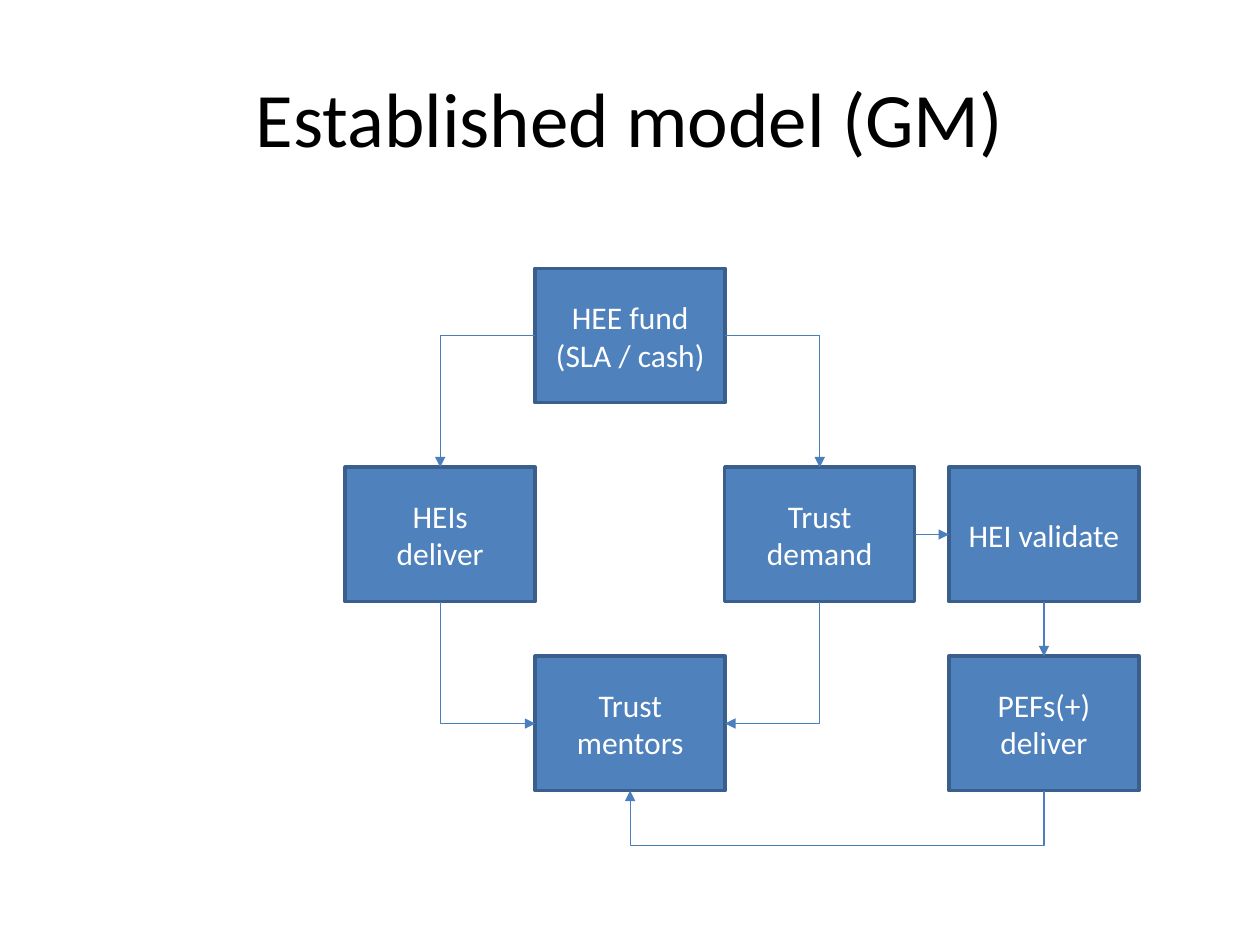
from dataclasses import dataclass
from typing import Optional

from lxml.etree import SubElement
from pptx import Presentation
from pptx.dml.color import RGBColor
from pptx.enum.shapes import MSO_CONNECTOR, MSO_SHAPE
from pptx.enum.text import MSO_ANCHOR, PP_ALIGN
from pptx.oxml.ns import qn
from pptx.util import Cm, Pt

HUES = {"fill": "4F81BD", "edge": "3A5F8C", "link": "4B7EBC",
        "light": "FFFFFF", "dark": "000000"}
WIDE, HIGH = 3.83, 2.71
COLS = [6.96, 10.79, 14.61, 19.13]
ROWS = [5.41, 9.42, 13.23]
LOW = 17.04


@dataclass
class Box:
    text: str
    col: int
    row: int

    @property
    def left(self) -> float:
        return COLS[self.col]

    @property
    def top(self) -> float:
        return ROWS[self.row]

    @property
    def west(self) -> tuple:
        return self.left, self.top + HIGH / 2

    @property
    def east(self) -> tuple:
        return self.left + WIDE, self.top + HIGH / 2

    @property
    def north(self) -> tuple:
        return self.left + WIDE / 2, self.top

    @property
    def south(self) -> tuple:
        return self.left + WIDE / 2, self.top + HIGH


@dataclass
class Link:
    start: tuple
    end: tuple
    bend: Optional[int] = None
    head: bool = True


ACROSS, DOWN = 100000, 0


def hue(name: str) -> RGBColor:
    return RGBColor.from_string(HUES[name])


def style(frame, size: int, tint: str) -> None:
    frame.word_wrap = True
    frame.vertical_anchor = MSO_ANCHOR.MIDDLE
    look = {"name": "Calibri", "size": Pt(size)}
    for para in frame.paragraphs:
        para.alignment = PP_ALIGN.CENTER
        for run in para.runs:
            for key, value in look.items():
                setattr(run.font, key, value)
            run.font.color.rgb = hue(tint)


def draw_box(slide, box: Box) -> None:
    shape = slide.shapes.add_shape(MSO_SHAPE.RECTANGLE, Cm(box.left), Cm(box.top),
                                   Cm(WIDE), Cm(HIGH))
    shape.shadow.inherit = False
    shape.fill.solid()
    shape.fill.fore_color.rgb = hue("fill")
    shape.line.color.rgb = hue("edge")
    shape.line.width = Pt(2)
    shape.text_frame.text = box.text
    style(shape.text_frame, 18, "light")


def draw_link(slide, link: Link) -> None:
    kind = MSO_CONNECTOR.STRAIGHT if link.bend is None else MSO_CONNECTOR.ELBOW
    ends = [Cm(value) for value in link.start + link.end]
    wire = slide.shapes.add_connector(kind, *ends)
    wire.line.color.rgb = hue("link")
    wire.line.width = Pt(0.75)
    props = wire.element.spPr
    if link.head:
        SubElement(props.find(qn("a:ln")), qn("a:tailEnd"), type="triangle")
    SubElement(props, qn("a:effectLst"))
    if link.bend is not None:
        guides = props.find(qn("a:prstGeom")).get_or_add_avLst()
        SubElement(guides, qn("a:gd"), name="adj1", fmla=f"val {link.bend}")


def main() -> None:
    deck = Presentation()
    deck.slide_width, deck.slide_height = Cm(25.4), Cm(19.05)
    slide = deck.slides.add_slide(deck.slide_layouts[5])

    title = slide.shapes.title
    place = {"left": 1.27, "top": 0.76, "width": 22.86, "height": 3.18}
    for key, value in place.items():
        setattr(title, key, Cm(value))
    title.text_frame.text = "Established model (GM)"
    style(title.text_frame, 44, "dark")

    fund = Box("HEE fund\n(SLA / cash)", 1, 0)
    heis = Box("HEIs\ndeliver", 0, 1)
    trust = Box("Trust demand", 2, 1)
    check = Box("HEI validate", 3, 1)
    mentors = Box("Trust mentors", 1, 2)
    pefs = Box("PEFs(+) deliver", 3, 2)
    for box in (fund, heis, trust, check, mentors, pefs):
        draw_box(slide, box)

    turn = (trust.south[0], LOW)
    links = [
        Link(fund.west, heis.north, ACROSS),
        Link(fund.east, trust.north, ACROSS),
        Link(heis.south, mentors.west, DOWN),
        Link(trust.south, mentors.east, DOWN),
        Link(trust.east, check.west),
        Link(check.south, pefs.north),
        Link(pefs.south, turn, DOWN, False),
        Link(turn, mentors.south, ACROSS),
    ]
    for link in links:
        draw_link(slide, link)

    deck.save("out.pptx")


if __name__ == "__main__":
    main()
